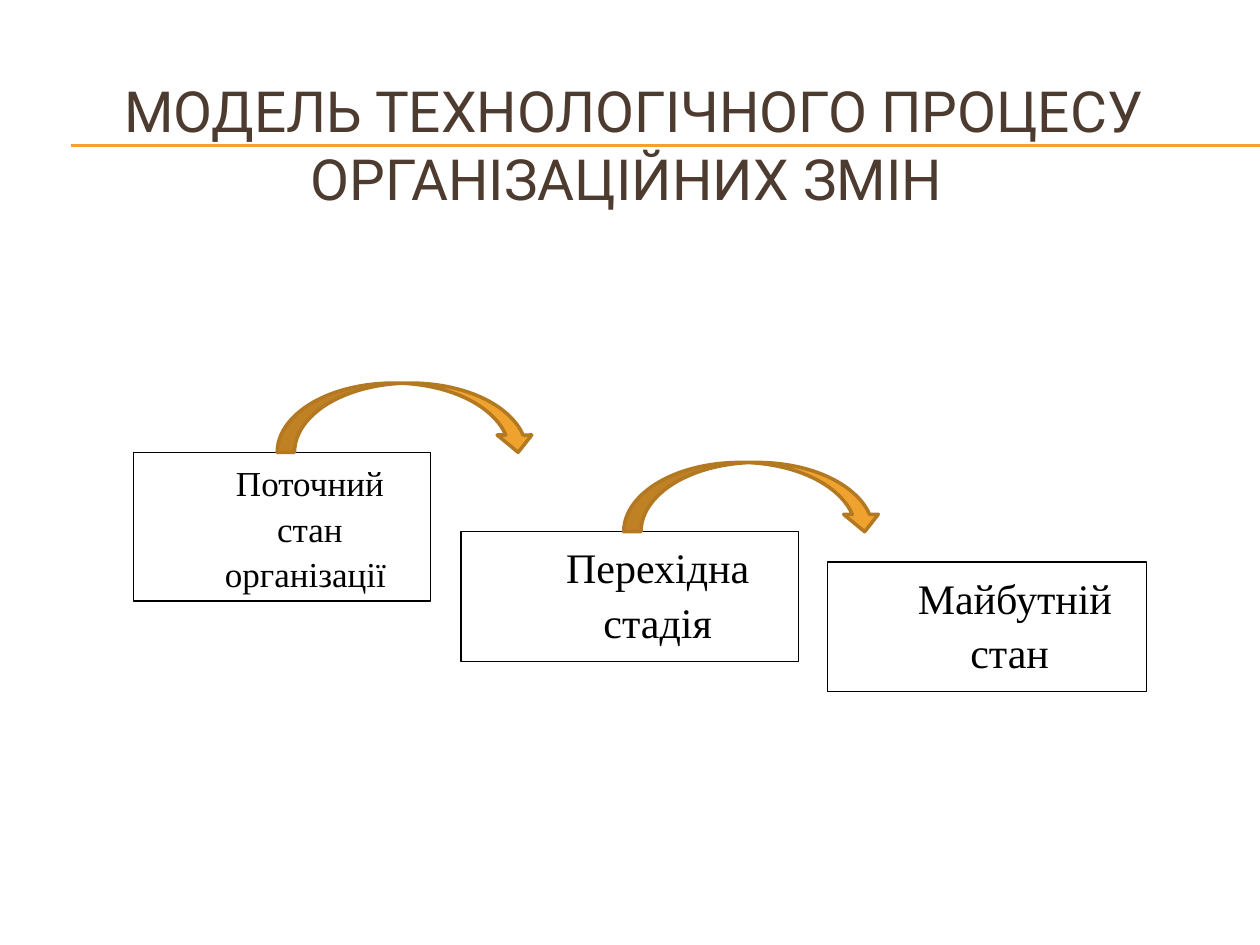
from pptx import Presentation
from pptx.dml.color import RGBColor
from pptx.enum.shapes import MSO_CONNECTOR, MSO_SHAPE
from pptx.enum.text import MSO_ANCHOR, PP_ALIGN
from pptx.oxml.ns import qn
from pptx.util import Inches, Pt

RECT, ARROW = MSO_SHAPE.RECTANGLE, MSO_SHAPE.CURVED_DOWN_ARROW
STRAIGHT = MSO_CONNECTOR.STRAIGHT
TOP, MIDDLE = MSO_ANCHOR.TOP, MSO_ANCHOR.MIDDLE
CENTER = PP_ALIGN.CENTER

# Content
TITLE = "МОДЕЛЬ ТЕХНОЛОГІЧНОГО ПРОЦЕСУ ОРГАНІЗАЦІЙНИХ ЗМІН "
TITLE_BOX = (0.28, 0.68, 9.5, 0.92)
RULE_LEFT, RULE_TOPS = 0.56, (1.15, 1.16)
STAGES = [  # text, font size, (left, top, width, height)
    ("Поточний стан організації ", 20, (1.06, 3.59, 2.36, 1.18)),
    ("Перехідна стадія", 24, (3.66, 4.22, 2.68, 1.03)),
    ("Майбутній стан ", 24, (6.57, 4.46, 2.53, 1.03)),
]
ARROW_LEFTS = (2.2, 4.95)
ARROW_W, ARROW_H = 2.05, 0.55
SLIDE_W, SLIDE_H = 10, 7.5
STAGE_INDENT = 0.44
ORANGE, DARK_ORANGE = "F0A22E", "B27822"
BROWN, BLACK, WHITE = "4E3B30", "000000", "FFFFFF"


def rgb(value):
    return RGBColor.from_string(value)


def set_line(shape, color, width):
    shape.line.color.rgb = rgb(color)
    shape.line.width = Pt(width)


def add_box(kind, box, fill, line, width):
    sp = s.shapes.add_shape(kind, *map(Inches, box))
    sp.shadow.inherit = False
    sp.fill.solid()
    sp.fill.fore_color.rgb = rgb(fill)
    set_line(sp, line, width)
    return sp


def write(sp, text, anchor, color, font, spacing=None):
    tf = sp.text_frame
    tf.word_wrap = True
    tf.vertical_anchor = anchor
    p = tf.paragraphs[0]
    p.alignment = CENTER
    p.line_spacing = spacing
    r = p.add_run()
    r.text = text
    r.font.color.rgb = rgb(color)
    for name, value in font.items():
        setattr(r.font, name, value)
    return p


prs = Presentation()
prs.slide_width, prs.slide_height = Inches(SLIDE_W), Inches(SLIDE_H)
s = prs.slides.add_slide(prs.slide_layouts[6])

# Rules behind the title
for top in RULE_TOPS:
    rule = s.shapes.add_connector(
        STRAIGHT, *map(Inches, (RULE_LEFT, top, SLIDE_W, top)))
    set_line(rule, ORANGE, 0.75)
    sp_pr = rule._element.spPr
    sp_pr.append(sp_pr.makeelement(qn("a:effectLst"), {}))

# Title
title = s.shapes.add_textbox(*map(Inches, TITLE_BOX))
write(title, TITLE, MIDDLE, BROWN, {"name": "Roboto", "size": Pt(32.4)})

# Stages
for text, size, box in STAGES:
    sp = add_box(RECT, box, WHITE, BLACK, 0.75)
    p = write(sp, text, TOP, BLACK,
              {"name": "Times New Roman", "size": Pt(size)}, 1.08)
    p._p.get_or_add_pPr().set("marL", str(Inches(STAGE_INDENT)))

# Arrows standing on the top edge of the stage they leave
for left, (_, _, box) in zip(ARROW_LEFTS, STAGES):
    add_box(ARROW, (left, box[1] - ARROW_H, ARROW_W, ARROW_H),
            ORANGE, DARK_ORANGE, 2)

prs.save("out.pptx")
